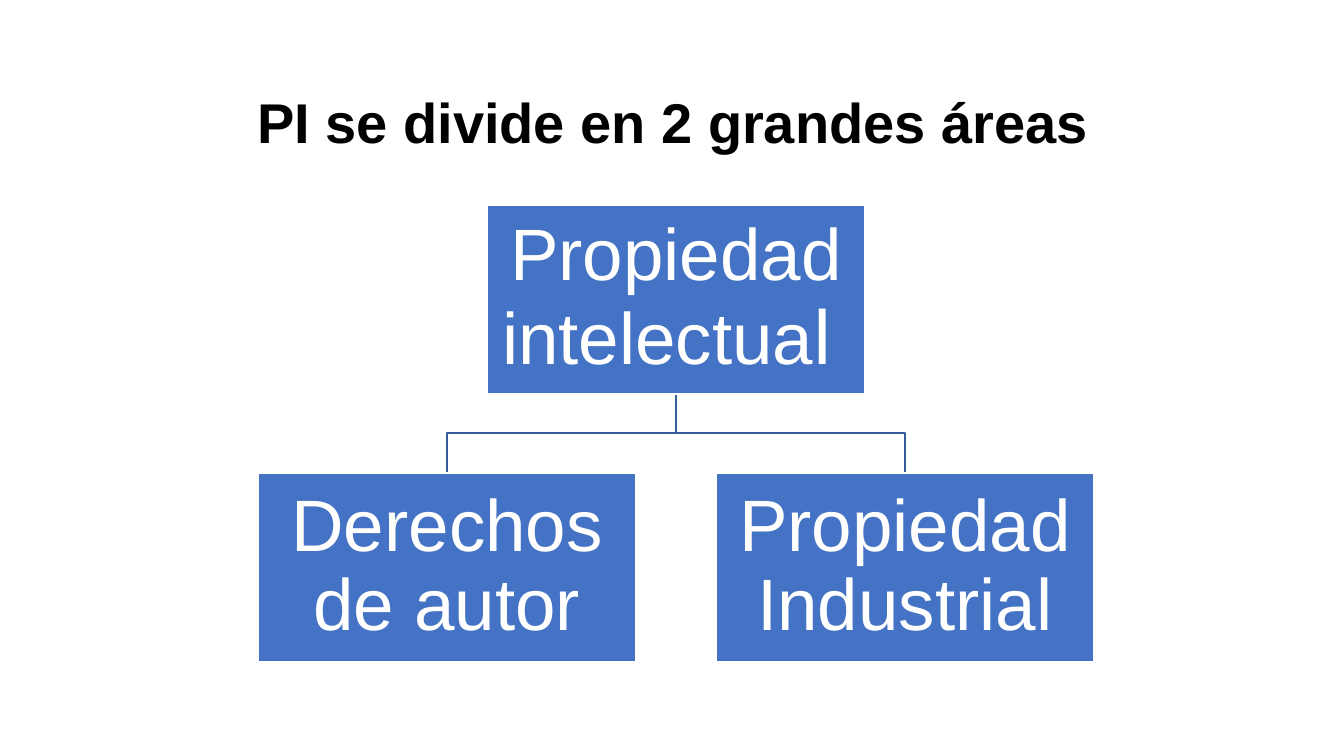
from dataclasses import dataclass

from pptx import Presentation
from pptx.dml.color import RGBColor
from pptx.enum.shapes import MSO_SHAPE
from pptx.enum.text import MSO_ANCHOR, PP_ALIGN
from pptx.slide import Slide
from pptx.text.text import TextFrame
from pptx.util import Pt

SCALE = 12192000 / 1344


@dataclass(frozen=True)
class Theme:
    font: str = "Arial"
    accent_font: str = "Calibri"
    ink: RGBColor = RGBColor(0, 0, 0)
    white: RGBColor = RGBColor(255, 255, 255)
    blue: RGBColor = RGBColor(0x44, 0x72, 0xC4)
    line: RGBColor = RGBColor(0x36, 0x5B, 0x9D)
    title: int = 40
    label: int = 52
    accent: int = 57


@dataclass(frozen=True)
class Node:
    left: int
    top: int
    text: str
    tail: str = ""
    width: int = 378
    height: int = 189

    @property
    def center(self) -> int:
        return self.left + self.width // 2

    @property
    def bottom(self) -> int:
        return self.top + self.height


THEME = Theme()
ROOT = Node(487, 205, "Propiedad intelectua", "l ")
AREAS = [
    Node(258, 473, "Derechos de autor"),
    Node(716, 473, "Propiedad Industrial"),
]


def px(value: int) -> int:
    return round(value * SCALE)


def write(frame: TextFrame, text: str, size: int, color: RGBColor,
          bold: bool = False, tail: str = "", inset: int = 4) -> None:
    frame.word_wrap = True
    frame.vertical_anchor = MSO_ANCHOR.MIDDLE
    frame.margin_left = frame.margin_right = px(inset)
    frame.margin_top = frame.margin_bottom = px(inset)
    frame.text = text
    para = frame.paragraphs[0]
    para.alignment = PP_ALIGN.CENTER
    para.line_spacing = 0.9
    if tail:
        para.add_run().text = tail
    for run in para.runs:
        run.font.name = THEME.font
        run.font.size = Pt(size)
        run.font.bold = bold
        run.font.color.rgb = color
    if tail:
        run = para.runs[-1]
        run.font.name = THEME.accent_font
        run.font.size = Pt(THEME.accent)


def add_title(slide: Slide) -> None:
    box = slide.shapes.add_textbox(px(93), px(52), px(1159), px(146))
    write(box.text_frame, "PI se divide en 2 grandes áreas",
          THEME.title, THEME.ink, bold=True)


def add_link(slide: Slide, start: Node, end: Node) -> None:
    middle = (start.bottom + end.top) // 2
    path = slide.shapes.build_freeform(start.center, start.bottom, SCALE)
    path.add_line_segments(
        [(start.center, middle), (end.center, middle), (end.center, end.top)],
        close=False,
    )
    shape = path.convert_to_shape()
    shape.shadow.inherit = False
    shape.fill.background()
    shape.line.color.rgb = THEME.line
    shape.line.width = Pt(1)


def add_node(slide: Slide, node: Node) -> None:
    shape = slide.shapes.add_shape(
        MSO_SHAPE.RECTANGLE, px(node.left), px(node.top),
        px(node.width), px(node.height),
    )
    shape.shadow.inherit = False
    shape.fill.solid()
    shape.fill.fore_color.rgb = THEME.blue
    shape.line.color.rgb = THEME.white
    shape.line.width = Pt(1)
    write(shape.text_frame, node.text, THEME.label, THEME.white, tail=node.tail)


def main() -> None:
    deck = Presentation()
    deck.slide_width, deck.slide_height = px(1344), px(756)
    slide = deck.slides.add_slide(deck.slide_layouts[6])
    add_title(slide)
    for area in AREAS:
        add_link(slide, ROOT, area)
    for node in [ROOT, *AREAS]:
        add_node(slide, node)
    deck.save("out.pptx")


if __name__ == "__main__":
    main()
